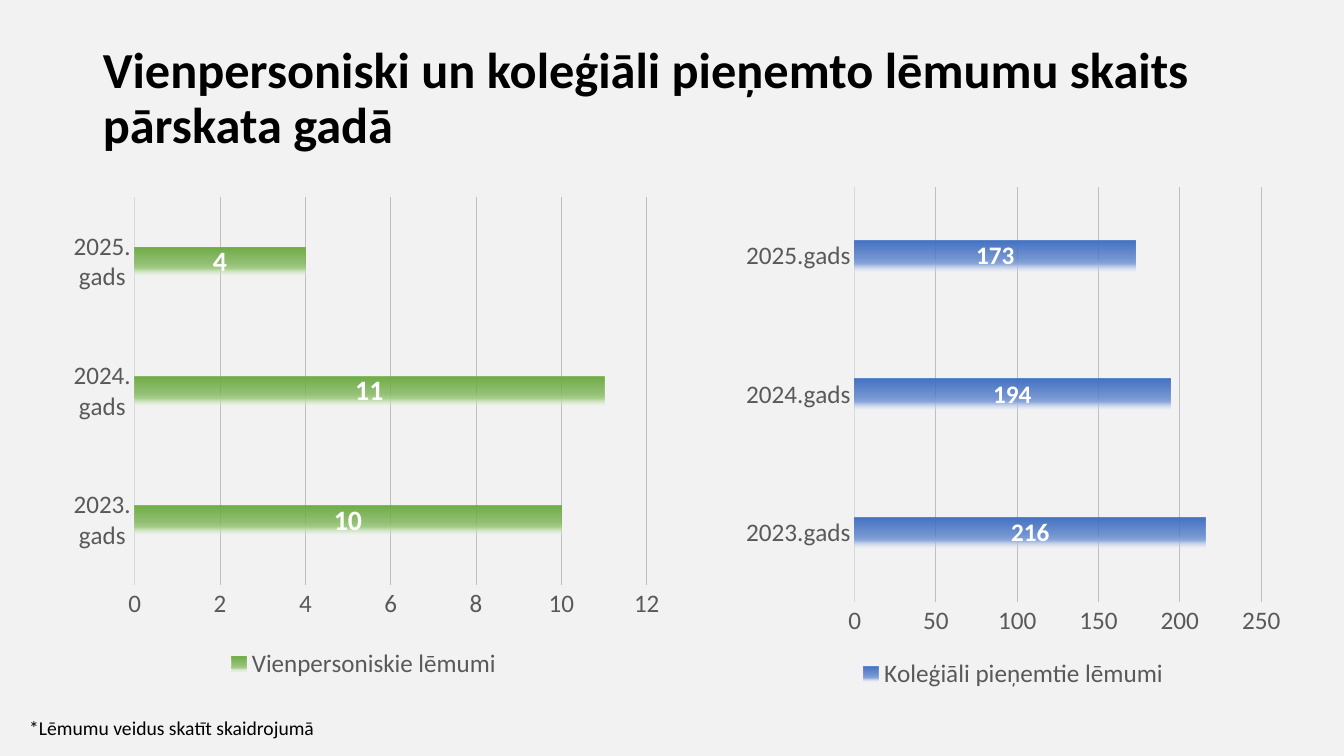
from dataclasses import dataclass
from typing import Optional

from lxml.etree import SubElement
from pptx import Presentation
from pptx.chart.chart import Chart
from pptx.chart.data import CategoryChartData
from pptx.dml.color import RGBColor
from pptx.enum.chart import XL_CHART_TYPE as ChartType
from pptx.enum.chart import XL_LABEL_POSITION as LabelPos
from pptx.enum.chart import XL_LEGEND_POSITION as LegendPos
from pptx.enum.chart import XL_TICK_MARK as Tick
from pptx.enum.text import MSO_ANCHOR as Anchor
from pptx.enum.text import MSO_AUTO_SIZE as AutoSize
from pptx.enum.text import PP_ALIGN as Align
from pptx.oxml.ns import qn
from pptx.util import Inches, Pt

WIDTH, HEIGHT = Inches(13.33), Inches(7.5)
FONT = "Calibri"
GREY = "595959"
YEARS = ["2023.gads", "2024.gads", "2025.gads"]


@dataclass
class Box:
    left: float
    top: float
    width: float
    height: float

    def emu(self) -> tuple[int, int, int, int]:
        return (int(WIDTH * self.left / 100), int(HEIGHT * self.top / 100),
                int(WIDTH * self.width / 100), int(HEIGHT * self.height / 100))


@dataclass
class DecisionChart:
    name: str
    values: list[int]
    box: Box
    shades: tuple[str, str, str]
    label_size: int
    axis_max: int
    axis_step: int
    plot: Optional[tuple[float, float, float, float]] = None


CHARTS = [
    DecisionChart("Vienpersoniskie lēmumi", [10, 11, 4], Box(5.33, 23.33, 43.74, 67.2),
                  ("70AD47", "A9D18E", "E2F0D9"), 20, 12, 2, (0.108, 0.041, 0.877, 0.763)),
    DecisionChart("Koleģiāli pieņemtie lēmumi", [216, 194, 173], Box(54.69, 23.33, 41.41, 68.53),
                  ("4472C4", "8FAADC", "DAE3F3"), 18, 250, 50),
]


def rgb(value: str) -> RGBColor:
    return RGBColor.from_string(value)


def style_font(font, size: int, color: str, bold: bool = False) -> None:
    font.name, font.size, font.bold = FONT, Pt(size), bold
    font.color.rgb = rgb(color)


def write(tf, text: str, size: int, *, bold: bool = False,
          anchor: Anchor = Anchor.TOP, spacing: float = 1.0,
          auto_size: AutoSize = AutoSize.NONE) -> None:
    tf.word_wrap, tf.auto_size, tf.vertical_anchor = True, auto_size, anchor
    p = tf.paragraphs[0]
    p.alignment, p.line_spacing = Align.LEFT, spacing
    r = p.add_run()
    r.text = text
    style_font(r.font, size, "000000", bold)


def fade_bars(series, shades: tuple[str, str, str]) -> None:
    base, middle, pale = shades
    series.format.fill.gradient()
    grad = series.format.fill._xPr.find(qn("a:gradFill"))
    for child in list(grad):
        grad.remove(child)
    stops = SubElement(grad, qn("a:gsLst"))
    for pos, color, alpha in ((0, base, 100), (51, base, 75), (75, middle, 100), (100, pale, 15)):
        gs = SubElement(stops, qn("a:gs"), pos=str(pos * 1000))
        clr = SubElement(gs, qn("a:srgbClr"), val=color)
        if alpha < 100:
            SubElement(clr, qn("a:alpha"), val=str(alpha * 1000))
    SubElement(grad, qn("a:lin"), ang="5400000", scaled="0")


def place_plot(chart: Chart, plot: tuple[float, float, float, float]) -> None:
    area = chart._chartSpace.chart.plotArea
    for old in area.findall(qn("c:layout")):
        area.remove(old)
    layout = SubElement(area, qn("c:layout"))
    area.insert(0, layout)
    manual = SubElement(layout, qn("c:manualLayout"))
    settings = [("layoutTarget", "inner"), ("xMode", "edge"), ("yMode", "edge")]
    for tag, val in settings + list(zip("xywh", plot)):
        SubElement(manual, qn(f"c:{tag}"), val=str(val))


def style_axes(chart: Chart, item: DecisionChart) -> None:
    cat, val = chart.category_axis, chart.value_axis
    for axis in (cat, val):
        axis.major_tick_mark = axis.minor_tick_mark = Tick.NONE
        style_font(axis.tick_labels.font, 18, GREY)
    cat.format.line.color.rgb = rgb("D9D9D9")
    cat.format.line.width = Pt(0.75)
    val.format.line.fill.background()
    val.minimum_scale, val.maximum_scale, val.major_unit = 0, item.axis_max, item.axis_step
    val.has_major_gridlines = True
    grid = val.major_gridlines.format.line
    grid.color.rgb, grid.width = rgb("BFBFBF"), Pt(0.75)


def add_decision_chart(s, item: DecisionChart) -> None:
    data = CategoryChartData()
    data.categories = YEARS
    data.add_series(item.name, item.values)
    chart = s.shapes.add_chart(ChartType.BAR_CLUSTERED, *item.box.emu(), data).chart
    style_font(chart.font, 18, "000000")
    chart.has_title = False
    chart.has_legend = True
    chart.legend.position = LegendPos.BOTTOM
    chart.legend.include_in_layout = False
    style_font(chart.legend.font, 18, GREY)
    style_axes(chart, item)
    bars = chart.plots[0]
    bars.gap_width, bars.vary_by_categories = 355, False
    series = bars.series[0]
    fade_bars(series, item.shades)
    labels = series.data_labels
    labels.show_value, labels.position = True, LabelPos.CENTER
    style_font(labels.font, item.label_size, "FFFFFF", True)
    if item.plot:
        place_plot(chart, item.plot)


def main() -> None:
    prs = Presentation()
    prs.slide_width, prs.slide_height = WIDTH, HEIGHT
    s = prs.slides.add_slide(prs.slide_layouts[5])
    s.background.fill.solid()
    s.background.fill.fore_color.rgb = rgb("F2F2F2")

    title = s.shapes.title
    title.left, title.top, title.width, title.height = Box(6.9, 5.33, 86.27, 15.73).emu()
    write(title.text_frame, "Vienpersoniski un koleģiāli pieņemto lēmumu skaits pārskata gadā",
          36, bold=True, anchor=Anchor.MIDDLE, spacing=0.9)

    for item in CHARTS:
        add_decision_chart(s, item)

    note = s.shapes.add_textbox(*Box(1.43, 94, 36.53, 4.53).emu())
    write(note.text_frame, "*Lēmumu veidus skatīt skaidrojumā", 14,
          auto_size=AutoSize.SHAPE_TO_FIT_TEXT)
    prs.save("out.pptx")


if __name__ == "__main__":
    main()
